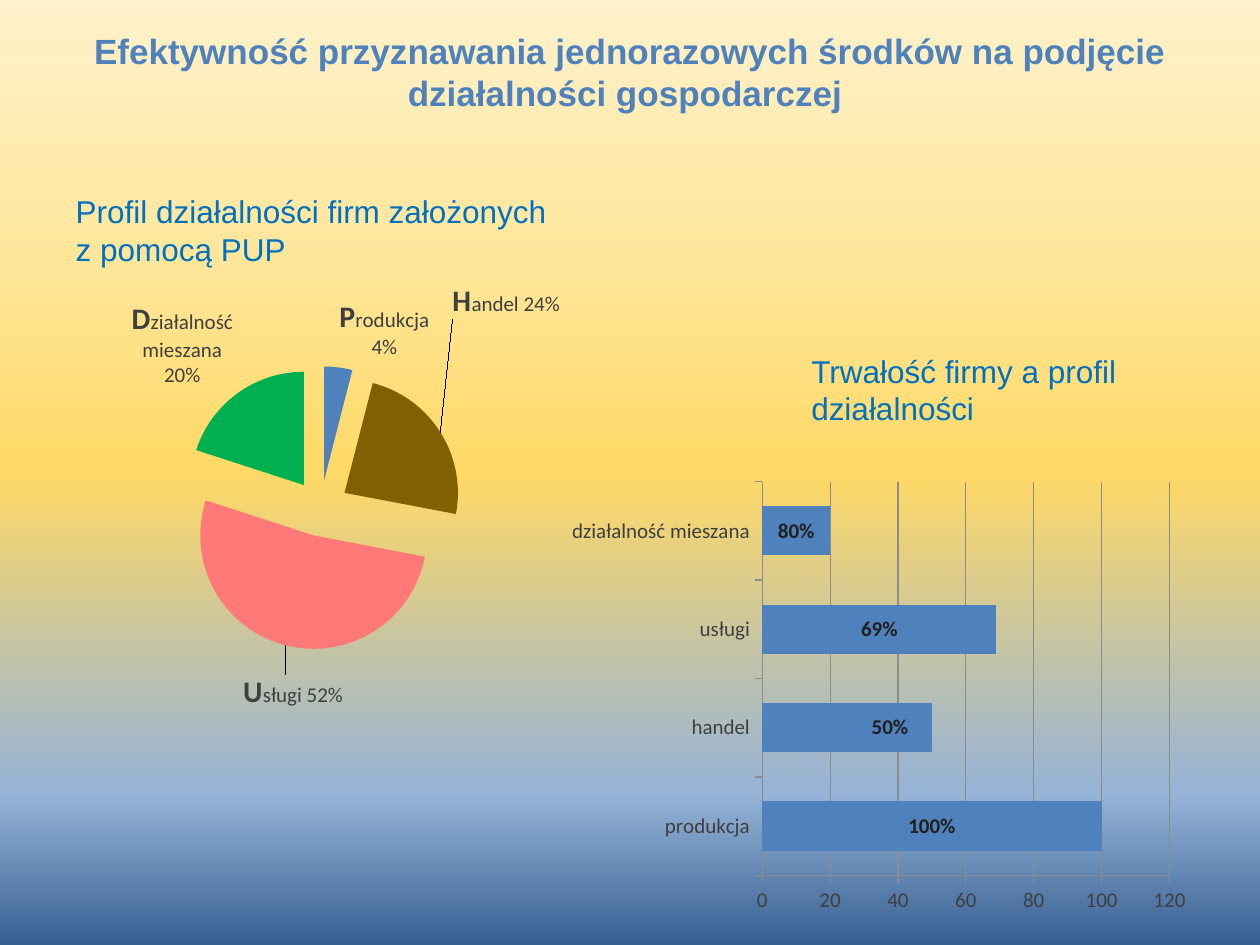
from lxml import etree
from pptx import Presentation
from pptx import util as u
from pptx.chart import data
from pptx.dml.color import RGBColor
from pptx.enum import chart as c, text
from pptx.oxml import ns

COLORS = {
    "title": "4F81BD", "heading": "0070C0", "label": "3F3F3F", "value": "202020",
    "grid": "8C8C8C", "bar": "4F81BD", "produkcja": "4F81BD", "handel": "806000",
    "usługi": "FF7979", "mieszana": "00B050",
}
BACKGROUND = [(0, "FFF2CC"), (28, "FFE699"), (50, "FFD966"), (84, "95B3D7"), (100, "376092")]
TITLE = {"name": "Arial", "size": u.Pt(20), "bold": True}
HEADING = {"name": "Arial", "size": u.Pt(18), "bold": False}
LABEL = {"name": "Calibri", "size": u.Pt(12), "bold": False}
INITIAL = {"name": "Calibri", "size": u.Pt(17), "bold": True}
VALUE = {"name": "Calibri", "size": u.Pt(12), "bold": True}
PIE = [
    ("produkcja", 4, "Produkcja 4%", None),
    ("handel", 24, "Handel 24%", (0.01, -0.25)),
    ("usługi", 52, "Usługi 52%", (0.1, 0.05)),
    ("mieszana", 20, "Działalność mieszana 20%", None),
]
BARS = [
    ("produkcja", 100, "100%", None),
    ("handel", 50, "50%", (0.06, 0)),
    ("usługi", 69, "69%", None),
    ("działalność mieszana", 20, "80%", None),
]


def rgb(name):
    """Return the named colour."""
    return RGBColor.from_string(COLORS[name])


def format_font(font, values, color):
    """Apply a dict of font values and a colour."""
    for name, value in values.items():
        setattr(font, name, value)
    font.color.rgb = rgb(color)


def add_node(parent, tag, **attributes):
    """Append an XML child and return it."""
    return etree.SubElement(parent, ns.qn(tag), attributes)


def paint_background(slide):
    """Fill the background with a vertical gradient."""
    fill = slide.background.fill
    fill.gradient()
    fill.gradient_angle = 270
    stops = slide.background._cSld.find(".//" + ns.qn("a:gsLst"))
    for stop in list(stops):
        stops.remove(stop)
    for position, color in BACKGROUND:
        stop = add_node(stops, "a:gs", pos=str(position * 1000))
        add_node(stop, "a:srgbClr", val=color)


def fill_placeholder(shape, box, wording, values, color, anchor):
    """Place a placeholder and write its text."""
    for name, length in zip(("left", "top", "width", "height"), box):
        setattr(shape, name, u.Cm(length))
    frame = shape.text_frame
    frame.text = wording
    frame.vertical_anchor = anchor
    for run in frame.paragraphs[0].runs:
        format_font(run.font, values, color)


def make_layout(values, inner=False):
    """Build a manual chart layout from fractions of the chart."""
    layout = etree.Element(ns.qn("c:layout"))
    manual = add_node(layout, "c:manualLayout")
    if inner:
        for tag, value in (("layoutTarget", "inner"), ("xMode", "edge"), ("yMode", "edge")):
            add_node(manual, "c:" + tag, val=value)
    for tag, value in zip("xywh", values):
        add_node(manual, "c:" + tag, val=str(value))
    return layout


def add_chart(slide, kind, box, rows, plot_box):
    """Add a one-series chart with a fixed plot area."""
    chart_data = data.CategoryChartData()
    chart_data.categories = [row[0] for row in rows]
    chart_data.add_series("Firmy", [row[1] for row in rows])
    chart = slide.shapes.add_chart(kind, *map(u.Cm, box), chart_data).chart
    chart.has_legend = chart.has_title = False
    format_font(chart.font, LABEL, "label")
    area = chart._chartSpace.chart.plotArea
    for layout in area.findall(ns.qn("c:layout")):
        area.remove(layout)
    area.insert(0, make_layout(plot_box, inner=True))
    return chart


def label_point(point, parts, color, position, offset):
    """Write a point label from (text, format) parts and shift it."""
    label = point.data_label
    paragraph = label.text_frame.paragraphs[0]
    for wording, values in parts:
        run = paragraph.add_run()
        run.text = wording
        format_font(run.font, values, color)
    label.position = position
    if offset:
        label._dLbl.insert(1, make_layout(offset))


def add_profile_pie(slide):
    """Add the exploded pie of business profiles."""
    chart = add_chart(slide, c.XL_CHART_TYPE.PIE, (0.71, 5.54, 11.99, 8.79), PIE,
                      (0.24, 0.21, 0.48, 0.65))
    plot = chart.plots[0]
    plot.vary_by_categories = True
    series = plot.series[0]
    explosion = etree.Element(ns.qn("c:explosion"), val="25")
    series._element.find(ns.qn("c:tx")).addnext(explosion)
    series.data_labels.show_value = True
    for index, (color, _, wording, offset) in enumerate(PIE):
        point = series.points[index]
        point.format.fill.solid()
        point.format.fill.fore_color.rgb = rgb(color)
        parts = [(wording[0], INITIAL), (wording[1:], LABEL)]
        label_point(point, parts, "label", c.XL_LABEL_POSITION.OUTSIDE_END, offset)


def hide_leader_lines(series):
    """Switch off the lines between the labels and their points."""
    for leader in series._element.iter(ns.qn("c:showLeaderLines")):
        leader.set("val", "0")


def add_survival_bars(slide):
    """Add the bars of firm survival by profile."""
    chart = add_chart(slide, c.XL_CHART_TYPE.BAR_STACKED, (10.04, 8.68, 14.4, 10.31), BARS,
                      (0.37, 0.1, 0.57, 0.77))
    plot = chart.plots[0]
    plot.vary_by_categories = False
    plot.gap_width = plot.overlap = 100
    series = plot.series[0]
    series.format.fill.solid()
    series.format.fill.fore_color.rgb = rgb("bar")
    series.data_labels.show_value = True
    for index, (_, _, wording, offset) in enumerate(BARS):
        label_point(series.points[index], [(wording, VALUE)], "value",
                    c.XL_LABEL_POSITION.CENTER, offset)
    hide_leader_lines(series)
    values = chart.value_axis
    values.minimum_scale, values.maximum_scale, values.major_unit = 0, 120, 20
    values.has_major_gridlines = True
    values.major_gridlines.format.line.color.rgb = rgb("grid")
    for axis in (chart.category_axis, values):
        axis.major_tick_mark = c.XL_TICK_MARK.OUTSIDE
        axis.format.line.color.rgb = rgb("grid")
        format_font(axis.tick_labels.font, LABEL, "label")


def main():
    """Build and save the presentation."""
    presentation = Presentation()
    presentation.slide_width, presentation.slide_height = u.Cm(25.4), u.Cm(19.05)
    slide = presentation.slides.add_slide(presentation.slide_layouts[4])
    paint_background(slide)
    title, left_heading, left_body, right_heading, right_body = slide.placeholders
    for unused in (left_body, right_body):
        unused._element.getparent().remove(unused._element)
    fill_placeholder(title, (1.27, 0.76, 22.86, 1.37),
                     "Efektywność przyznawania jednorazowych środków na podjęcie "
                     "działalności gospodarczej ", TITLE, "title", text.MSO_ANCHOR.MIDDLE)
    headings = [
        (left_heading, (1.27, 3.73, 11.23, 1.8),
         "Profil działalności firm założonych\vz pomocą PUP"),
        (right_heading, (16.1, 6.53, 8.03, 2.21), "Trwałość firmy a profil działalności"),
    ]
    for shape, box, wording in headings:
        fill_placeholder(shape, box, wording, HEADING, "heading", text.MSO_ANCHOR.BOTTOM)
    add_profile_pie(slide)
    add_survival_bars(slide)
    presentation.save("out.pptx")


if __name__ == "__main__":
    main()
